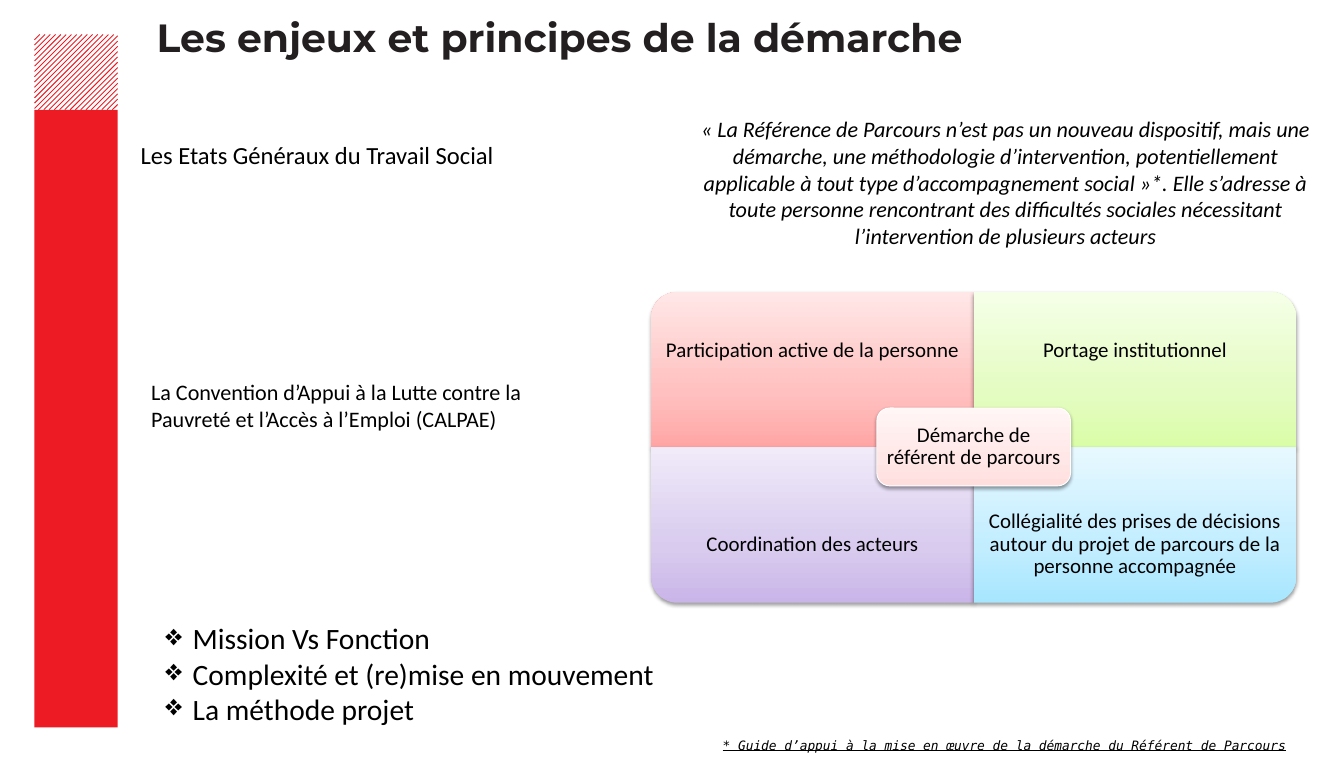
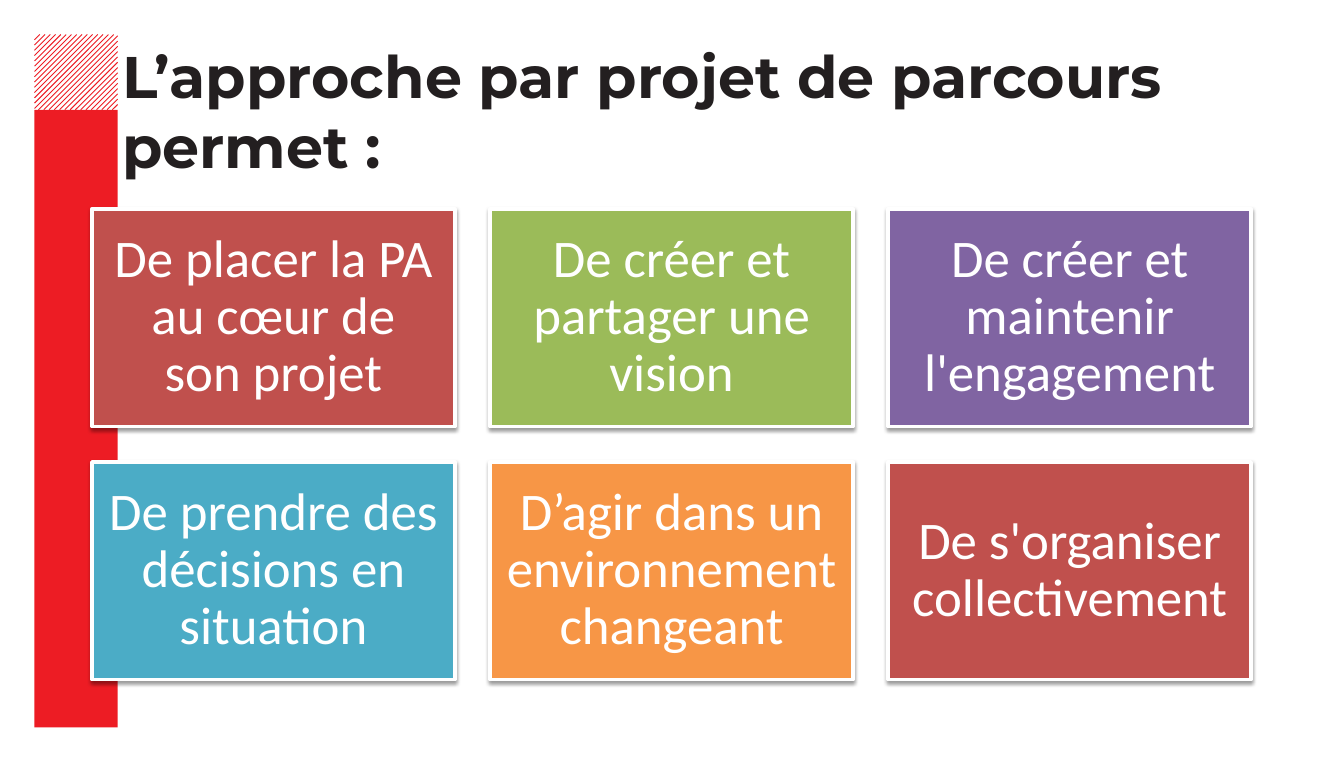
from lxml.etree import SubElement
from pptx import Presentation
from pptx.dml.color import RGBColor
from pptx.enum.shapes import MSO_CONNECTOR, MSO_SHAPE as SHAPE
from pptx.enum.text import MSO_ANCHOR as ANCHOR, MSO_AUTO_SIZE as AUTO_SIZE, PP_ALIGN as ALIGN
from pptx.oxml import parse_xml
from pptx.oxml.ns import nsdecls, qn
from pptx.util import Inches, Pt

COLORS = {
    "band": "ED1C24", "title": "231F20", "black": "000000", "white": "FFFFFF",
    "red": "C0504D", "green": "9BBB59", "purple": "8064A2", "teal": "4BACC6", "orange": "F79646",
}
GRADIENTS = {
    "rose": ("FFA6A5", "FFC0BF", "FFE7E7"),
    "lime": ("DAFDA7", "E4FCC2", "F5FFE7"),
    "lilac": ("C9B5E8", "D8CBEE", "F0EAF9"),
    "sky": ("A7E6FF", "C1EDFF", "E7F8FF"),
    "blush": ("FFDFDE", "FFE7E7", "FFF6F5"),
}


def write(frame, lines, size, color="black", font="Calibri", align=ALIGN.LEFT,
          bold=False, italic=False, underline=False, inset=None, anchor=ANCHOR.TOP, spacing=None):
    frame.word_wrap = True
    frame.auto_size = AUTO_SIZE.NONE
    frame.vertical_anchor = anchor
    if inset is not None:
        frame.margin_left = frame.margin_right = Inches(inset)
        frame.margin_top = frame.margin_bottom = Inches(inset)
    for number, line in enumerate(lines):
        paragraph = frame.add_paragraph() if number else frame.paragraphs[0]
        paragraph.alignment = align
        if spacing:
            paragraph.line_spacing = spacing
        run = paragraph.add_run()
        run.text = line
        run.font.name = font
        run.font.size = Pt(size)
        run.font.bold = bold
        run.font.italic = italic
        run.font.underline = underline
        run.font.color.rgb = RGBColor.from_string(COLORS[color])


def paint(shape, solid=None, gradient=None, outline=None):
    if solid:
        shape.fill.solid()
        shape.fill.fore_color.rgb = RGBColor.from_string(COLORS[solid])
    else:
        stops = "".join(
            f'<a:gs pos="{position}"><a:srgbClr val="{color}"/></a:gs>'
            for position, color in zip((0, 35000, 100000), GRADIENTS[gradient]))
        shape.element.spPr.find(qn("a:prstGeom")).addnext(parse_xml(
            f'<a:gradFill {nsdecls("a")} rotWithShape="0"><a:gsLst>{stops}</a:gsLst>'
            '<a:lin ang="16200000" scaled="0"/></a:gradFill>'))
    if outline:
        shape.line.color.rgb = RGBColor.from_string(COLORS["white"])
        shape.line.width = Pt(outline)
    else:
        shape.line.fill.background()
    shape.shadow.inherit = False
    shape.element.spPr.find(qn("a:effectLst")).append(parse_xml(
        f'<a:outerShdw {nsdecls("a")} blurRad="40000" dist="20000" dir="5400000" rotWithShape="0">'
        '<a:srgbClr val="000000"><a:alpha val="38000"/></a:srgbClr></a:outerShdw>'))


deck = Presentation()
deck.slide_width, deck.slide_height = Inches(15.19), Inches(8.61)
layout = deck.slide_layouts[5]
for unused in list(layout.placeholders)[1:]:
    unused.element.getparent().remove(unused.element)

issues = deck.slides.add_slide(layout)
approach = deck.slides.add_slide(layout)

band_left, hatch_top, band_width, hatch_height = 0.39, 0.39, 0.94, 0.85
band = issues.shapes.add_shape(
    SHAPE.RECTANGLE, Inches(band_left), Inches(hatch_top + hatch_height), Inches(band_width), Inches(6.98))
band.fill.solid()
band.fill.fore_color.rgb = RGBColor.from_string(COLORS["band"])
band.line.fill.background()
band.shadow.inherit = False
band_parts = [band]
for number in range(1, 30):
    reach = number * (band_width + hatch_height) / 30
    stroke = issues.shapes.add_connector(
        MSO_CONNECTOR.STRAIGHT,
        Inches(band_left + min(reach, band_width)), Inches(hatch_top + max(0, reach - band_width)),
        Inches(band_left + max(0, reach - hatch_height)), Inches(hatch_top + min(reach, hatch_height)))
    stroke.line.color.rgb = RGBColor.from_string(COLORS["band"])
    stroke.line.width = Pt(0.75)
    SubElement(stroke.element.spPr, qn("a:effectLst"))
    band_parts.append(stroke)
for part in band_parts:
    layout.shapes.element.insert(2, part.element)

for slide, heading, size, box in (
    (issues, "Les enjeux et principes de la démarche", 32, (1.77, 0.15, 12.02, 0.54)),
    (approach, "L’approche par projet de parcours permet :", 47.7, (1.38, 0.45, 13.11, 1.65)),
):
    title = slide.shapes.title
    title.left, title.top, title.width, title.height = map(Inches, box)
    write(title.text_frame, [heading], size, "title", "Montserrat", bold=True, inset=0)

methods = issues.shapes.add_textbox(Inches(1.77), Inches(6.96), Inches(8.74), Inches(1.31))
write(methods.text_frame, ["Mission Vs Fonction", "Complexité et (re)mise en mouvement", "La méthode projet"], 24)
for paragraph in methods.text_frame.paragraphs:
    properties = paragraph._p.get_or_add_pPr()
    properties.set("marL", str(Inches(0.31)))
    properties.set("indent", str(-Inches(0.31)))
    SubElement(properties, qn("a:buChar")).set("char", "❖")

quote = (
    "« La Référence de Parcours n’est pas un nouveau dispositif, mais une démarche, "
    "une méthodologie d’intervention, potentiellement applicable à tout type "
    "d’accompagnement social »*. Elle s’adresse à toute personne rencontrant des "
    "difficultés sociales nécessitant l’intervention de plusieurs acteurs")
for box, text, size, style in (
    ((1.49, 1.53, 10.47, 0.44), "Les Etats Généraux du Travail Social", 20, {}),
    ((7.72, 1.26, 7.29, 1.62), quote, 18, {"align": ALIGN.CENTER, "italic": True}),
    ((8.07, 8.28, 7, 0.28), "* Guide d’appui à la mise en œuvre de la démarche du Référent de Parcours",
     10.5, {"font": "DejaVu Sans Mono", "italic": True, "underline": True}),
    ((1.61, 4.23, 4.88, 0.71),
     "La Convention d’Appui à la Lutte contre la Pauvreté et l’Accès à l’Emploi (CALPAE)", 18, {}),
):
    note = issues.shapes.add_textbox(*map(Inches, box))
    write(note.text_frame, [text], size, **style)

matrix_left, matrix_top, cell_width, cell_height, label_height = 7.36, 3.3, 3.645, 1.755, 1.32
for column, row, rotation, gradient, text in (
    (0, 0, 270, "rose", "Participation active de la personne"),
    (1, 0, 0, "lime", "Portage institutionnel"),
    (0, 1, 180, "lilac", "Coordination des acteurs"),
    (1, 1, 90, "sky", "Collégialité des prises de décisions autour du projet de parcours de la personne accompagnée"),
):
    left = matrix_left + column * cell_width
    top = matrix_top + row * cell_height
    width, height = (cell_height, cell_width) if rotation % 180 else (cell_width, cell_height)
    quadrant = issues.shapes.add_shape(
        SHAPE.ROUND_1_RECTANGLE, Inches(left + (cell_width - width) / 2),
        Inches(top + (cell_height - height) / 2), Inches(width), Inches(height))
    quadrant.rotation = rotation
    paint(quadrant, gradient=gradient)
    label = issues.shapes.add_textbox(
        Inches(left), Inches(top + row * (cell_height - label_height)), Inches(cell_width), Inches(label_height))
    write(label.text_frame, [text], 17, align=ALIGN.CENTER, inset=0.13, anchor=ANCHOR.MIDDLE, spacing=0.9)

hub = issues.shapes.add_shape(SHAPE.ROUNDED_RECTANGLE, Inches(9.91), Inches(4.61), Inches(2.19), Inches(0.88))
paint(hub, gradient="blush", outline=0.75)
write(hub.text_frame, ["Démarche de référent de parcours"], 17,
      align=ALIGN.CENTER, inset=0.07, anchor=ANCHOR.MIDDLE, spacing=0.9)

benefits = (
    ("red", "De placer la PA au cœur de son projet"),
    ("green", "De créer et partager une vision"),
    ("purple", "De créer et maintenir l'engagement"),
    ("teal", "De prendre des décisions en situation"),
    ("orange", "D’agir dans un environnement changeant"),
    ("red", "De s'organiser collectivement"),
)
card_width, card_height, card_gap = 4.1, 2.46, 0.4
for number, (color, text) in enumerate(benefits):
    row, column = divmod(number, 3)
    card = approach.shapes.add_shape(
        SHAPE.RECTANGLE, Inches(1.04 + column * (card_width + card_gap)),
        Inches(2.36 + row * (card_height + card_gap)), Inches(card_width), Inches(card_height))
    paint(card, solid=color, outline=3)
    write(card.text_frame, [text], 43, "white", align=ALIGN.CENTER,
          inset=0.18, anchor=ANCHOR.MIDDLE, spacing=0.9)

deck.save("out.pptx")
